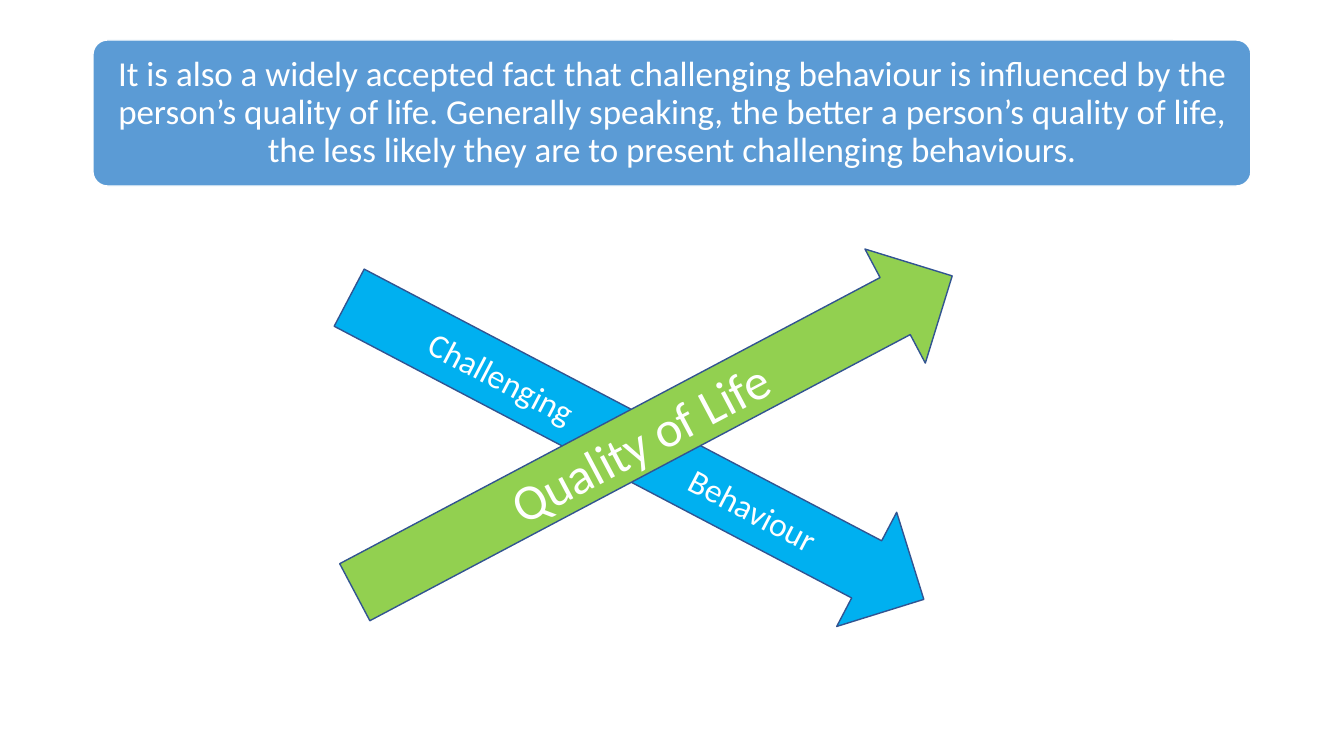
"""Build a slide on how quality of life influences challenging behaviour."""
from pptx import Presentation
from pptx import util as u
from pptx.dml.color import RGBColor
from pptx.enum import shapes, text
from pptx.oxml.ns import qn
from lxml import etree

SCALE = 914400 / 100.8
BLUE = RGBColor(0x5B, 0x9B, 0xD5)
SKY = RGBColor(0x00, 0xB0, 0xF0)
GREEN = RGBColor(0x92, 0xD0, 0x50)
NAVY = RGBColor(0x32, 0x54, 0x91)
WHITE = RGBColor(0xFF, 0xFF, 0xFF)


def px(num):
    """Turn pixels into EMU."""
    return u.Emu(round(num * SCALE))


def write(shape, words, size, inset=0, space=1.0, tabs=()):
    """Write one formatted paragraph, centred unless tab stops are given."""
    frame = shape.text_frame
    frame.word_wrap = True
    frame.vertical_anchor = text.MSO_ANCHOR.MIDDLE
    frame.margin_left = frame.margin_right = px(inset)
    frame.margin_top = frame.margin_bottom = px(inset)
    para = frame.paragraphs[0]
    para.alignment = text.PP_ALIGN.LEFT if tabs else text.PP_ALIGN.CENTER
    para.line_spacing = space
    run = para.add_run()
    run.text = words
    run.font.size = u.Pt(size)
    run.font.name = "Calibri"
    run.font.color.rgb = WHITE
    if tabs:
        stops = etree.SubElement(para._p.get_or_add_pPr(), qn("a:tabLst"))
        for stop in tabs:
            etree.SubElement(stops, qn("a:tab"), pos=str(px(stop)), algn="l")


def draw(slide, kind, box, fill, line):
    """Draw a filled and outlined preset shape."""
    shape = slide.shapes.add_shape(kind, *map(px, box))
    shape.shadow.inherit = False
    shape.fill.solid()
    shape.fill.fore_color.rgb = fill
    shape.line.color.rgb = line
    shape.line.width = u.Pt(1)
    return shape


def banner(slide, box, words):
    """Add the rounded statement at the top."""
    shape = draw(slide, shapes.MSO_SHAPE.ROUNDED_RECTANGLE, box, BLUE, WHITE)
    shape.adjustments[0] = 0.1
    write(shape, words, 25, inset=14, space=0.9)


def arrow(slide, box, turn, fill, words, size, tabs=()):
    """Add a turned arrow with its label running along the shaft."""
    shape = draw(slide, shapes.MSO_SHAPE.DOWN_ARROW, box, fill, NAVY)
    shape.rotation = turn
    write(shape, words, size, tabs=tabs)
    shape.text_frame._txBody.bodyPr.set("vert", "vert")


def main():
    """Build and save the slide."""
    deck = Presentation()
    deck.slide_width, deck.slide_height = px(1344), px(756)
    slide = deck.slides.add_slide(deck.slide_layouts[6])
    banner(slide, (93, 40, 1158, 146),
           "It is also a widely accepted fact that challenging behaviour is "
           "influenced by the person’s quality of life. Generally speaking, "
           "the better a person’s quality of life, the less likely they are "
           "to present challenging behaviours.")
    arrow(slide, (572, 124, 129, 649), 297.7, SKY,
          "\tChallenging\tBehaviour", 24, tabs=(93, 387))
    arrow(slide, (589, 96, 129, 676), 242.1, GREEN, "Quality of Life", 36)
    deck.save("out.pptx")


if __name__ == "__main__":
    main()
